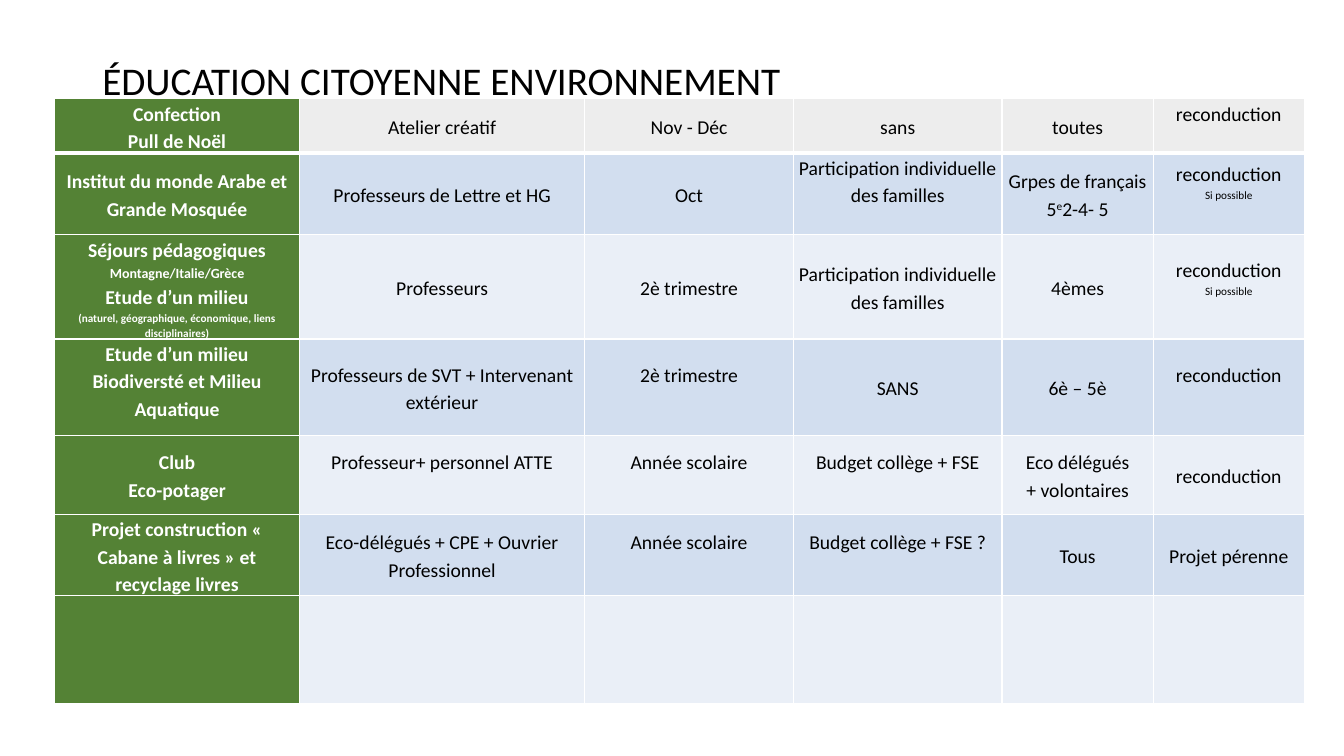
from pptx import Presentation
from pptx.dml.color import RGBColor as RGB
from pptx.enum.text import MSO_ANCHOR as ANCHOR, PP_ALIGN as ALIGN
from pptx.oxml import parse_xml
from pptx.oxml.ns import nsdecls
from pptx.util import Pt

COLORS = {"text": "000000", "white": "FFFFFF", "label": "548235",
          "top": "EDEDED", "odd": "D2DEEF", "even": "EAEFF7"}
FONT = "Calibri"
COLS = [174.96, 203.76, 149.04, 149.04, 108, 108]
ROWS = [38.16, 57.6, 63.36, 68.4, 56.16, 56.88, 77.04]
LINE = 19.6  # height of one 14 pt line

# A cell is a string (one paragraph per line) or a list of paragraphs,
# each a list of (text, font values) runs
AGAIN = "reconduction"
IF_POSSIBLE = [[(AGAIN, {})], [("Si possible", {"size": Pt(8)})]]
FAMILIES = "Participation individuelle des familles"
FRENCH_GROUPS = [[("Grpes de français 5", {}), ("e", {"baseline": "30000"}),
                  ("2-4- 5", {})]]
TRIPS = [[("Séjours pédagogiques ", {}),
          ("Montagne/Italie/Grèce", {"size": Pt(10)})],
         [("Etude d’un milieu", {})],
         [("(naturel, géographique, économique, liens disciplinaires)",
           {"size": Pt(8)})]]
PROJECTS = [
    ["Confection\nPull de Noël", "Atelier créatif", "Nov - Déc", "sans",
     "toutes", AGAIN],
    ["Institut du monde Arabe et Grande Mosquée",
     "Professeurs de Lettre et HG", "Oct", FAMILIES, FRENCH_GROUPS,
     IF_POSSIBLE],
    [TRIPS, "Professeurs", "2è trimestre", FAMILIES, "4èmes", IF_POSSIBLE],
    ["Etude d’un milieu\nBiodiversté et Milieu Aquatique",
     "Professeurs de SVT + Intervenant extérieur", "2è trimestre", "SANS",
     "6è – 5è", AGAIN],
    ["Club\nEco-potager", "Professeur+ personnel ATTE", "Année scolaire",
     "Budget collège + FSE", "Eco délégués\n+ volontaires", AGAIN],
    ["Projet construction « Cabane à livres » et recyclage livres",
     "Eco-délégués + CPE + Ouvrier Professionnel", "Année scolaire",
     "Budget collège + FSE ?", "Tous", "Projet pérenne"],
    [""] * 6,
]
# Cells whose text sits higher: (row, column) -> bottom margin
RAISED = {(0, 5): LINE, (1, 3): LINE, (1, 5): LINE, (2, 5): 14,
          (3, 0): 11.2, (3, 2): LINE, (3, 5): LINE, (4, 1): LINE,
          (4, 2): LINE, (4, 3): LINE, (5, 2): LINE, (5, 3): LINE}


def add_run(p, text, color, **values):
    r = p.add_run()
    r.text = text
    baseline = values.pop("baseline", None)
    if baseline:
        r.font._element.set("baseline", baseline)
    for name, value in values.items():
        setattr(r.font, name, value)
    r.font.color.rgb = RGB.from_string(COLORS[color])


def add_borders(cell, bottom):
    tcPr = cell._tc.get_or_add_tcPr()
    widths = {"lnL": 1, "lnR": 1, "lnT": 1, "lnB": bottom}
    for i, (side, width) in enumerate(widths.items()):
        tcPr.insert(i, parse_xml(
            f'<a:{side} {nsdecls("a")} w="{Pt(width)}"><a:solidFill>'
            f'<a:srgbClr val="{COLORS["white"]}"/></a:solidFill></a:{side}>'))


def fill_cell(cell, content, fill, label, raised):
    values = {"margin_left": Pt(3.6), "margin_right": Pt(3.6),
              "margin_top": 0, "margin_bottom": Pt(raised),
              "vertical_anchor": ANCHOR.MIDDLE}
    for name, value in values.items():
        setattr(cell, name, value)
    cell.fill.solid()
    cell.fill.fore_color.rgb = RGB.from_string(COLORS[fill])
    if not content:
        return
    if isinstance(content, str):
        content = [[(line, {})] for line in content.split("\n")]
    tf = cell.text_frame
    base = {"name": FONT, "size": Pt(14), "bold": label}
    for i, runs in enumerate(content):
        p = tf.add_paragraph() if i else tf.paragraphs[0]
        p.alignment, p.line_spacing = ALIGN.CENTER, 1.15
        for text, extra in runs:
            add_run(p, text, "white" if label else "text", **{**base, **extra})


def add_title(s, x, y, w, h):
    tf = s.shapes.add_textbox(Pt(x), Pt(y), Pt(w), Pt(h)).text_frame
    tf.word_wrap = True
    tf.vertical_anchor = ANCHOR.MIDDLE
    p = tf.paragraphs[0]
    p.line_spacing = 0.9
    add_run(p, "ÉDUCATION CITOYENNE ENVIRONNEMENT", "text",
            name=FONT, size=Pt(28))


def add_projects(s, x, y):
    table = s.shapes.add_table(len(ROWS), len(COLS), Pt(x), Pt(y),
                               Pt(sum(COLS)), Pt(sum(ROWS))).table
    for column, width in zip(table.columns, COLS):
        column.width = Pt(width)
    for i, (height, project) in enumerate(zip(ROWS, PROJECTS)):
        table.rows[i].height = Pt(height)
        band = "top" if i == 0 else "odd" if i % 2 else "even"
        for j, content in enumerate(project):
            cell = table.cell(i, j)
            fill_cell(cell, content, band if j else "label", j == 0,
                      RAISED.get((i, j), 0))
            add_borders(cell, 1 if i else 3)


def main():
    prs = Presentation()
    prs.slide_width, prs.slide_height = Pt(960), Pt(540)
    s = prs.slides.add_slide(prs.slide_layouts[6])
    add_title(s, 66, 28.8, 842.4, 60.5)
    add_projects(s, 39, 70.6)
    prs.save("out.pptx")


if __name__ == "__main__":
    main()
